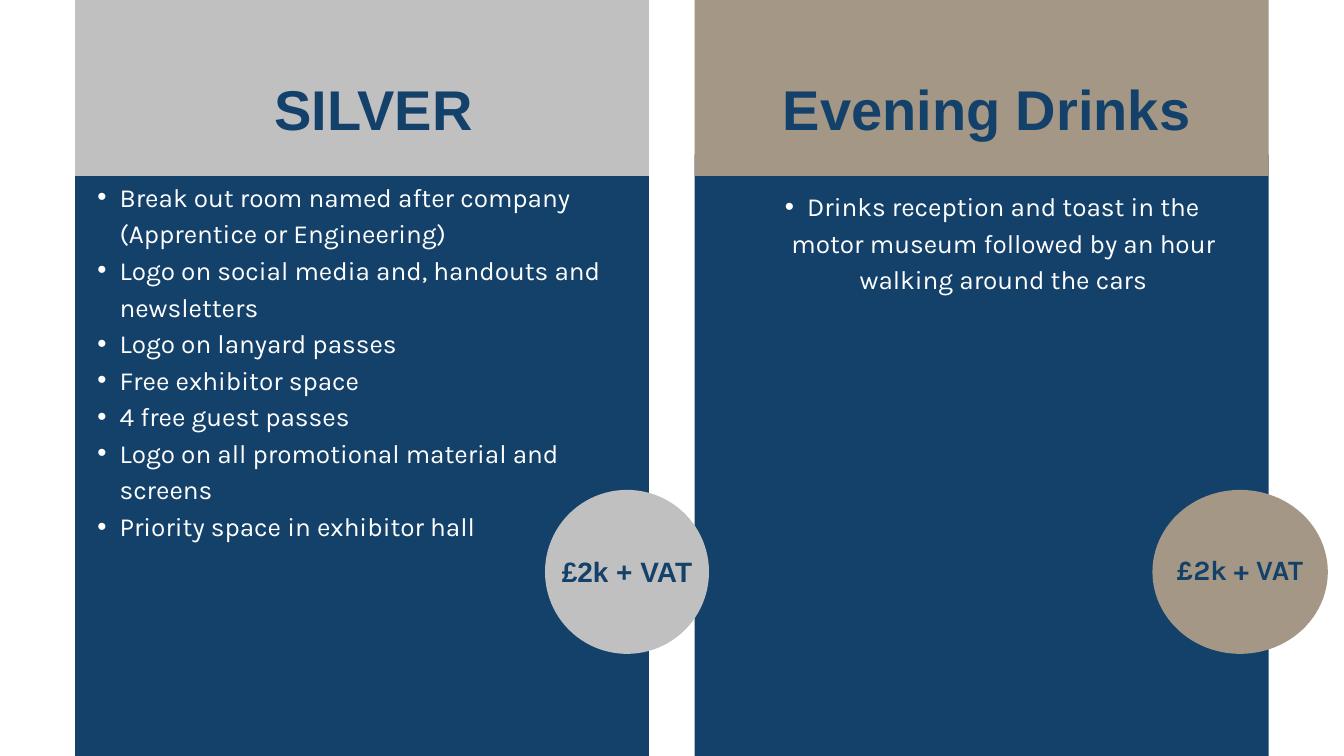
"""Build a slide comparing two sponsorship packages."""
import pptx
import pptx.util
import pptx.dml.color
import pptx.enum.shapes
import pptx.enum.text
import pptx.oxml
import pptx.oxml.ns

Cm, Pt = pptx.util.Cm, pptx.util.Pt
SHAPE = pptx.enum.shapes.MSO_SHAPE
ALIGN = pptx.enum.text.PP_ALIGN
ANCHOR = pptx.enum.text.MSO_ANCHOR

NAVY, WHITE, SILVER, BRONZE = "14416A", "FFFFFF", "C0C0C0", "A49785"
PANEL_TOP, PANEL_WIDTH, HEADER_BOTTOM = 5.84, 21.69, 6.65

PACKAGES = [
    {
        "title": "SILVER",
        "items": [
            "Break out room named after company (Apprentice or Engineering)",
            "Logo on social media and, handouts and newsletters",
            "Logo on lanyard passes",
            "Free exhibitor space",
            "4 free guest passes",
            "Logo on all promotional material and screens",
            "Priority space in exhibitor hall",
        ],
        "price": "£2k + VAT", "price_font": "Arial", "color": SILVER,
        "left": 2.84, "panel_height": 23.85, "header_top": -2.21,
        "title_at": (9.04, 3.18, 10.16, 2.34),
        "list_at": (2.84, 6.65, 20.83, 13.72), "list_align": ALIGN.LEFT,
        "badge_at": (20.6, 18.52, 6.2, 6.2), "price_at": (21.16, 20.73, 5.08, 1.5),
        "title_holder": 0, "list_holder": 2,
    },
    {
        "title": "Evening Drinks",
        "items": ["Drinks reception and toast in the motor museum followed by "
                  "an hour walking around the cars"],
        "price": "£2k + VAT", "price_font": "Karla", "color": BRONZE,
        "left": 26.26, "panel_height": 24.41, "header_top": -1.83,
        "title_at": (29.14, 3.18, 16.31, 2.34),
        "list_at": (27.86, 7.01, 18.44, 4.09), "list_align": ALIGN.CENTER,
        "badge_at": (43.56, 18.52, 6.63, 6.2), "price_at": (44.17, 18.72, 5.38, 5.41),
        "title_holder": 3, "list_holder": 4,
    },
]


def rgb(value):
    return pptx.dml.color.RGBColor.from_string(value)


def add_block(page, kind, at, color):
    block = page.shapes.add_shape(kind, *map(Cm, at))
    block.shadow.inherit = False
    block.fill.solid()
    block.fill.fore_color.rgb = rgb(color)
    block.line.fill.background()


def add_bullet(para):
    properties = para._p.get_or_add_pPr()
    properties.set("marL", str(Cm(1.68)))
    properties.set("indent", str(-Cm(0.84)))
    for tag, name, value in (("a:buFont", "typeface", "Arial"), ("a:buChar", "char", "•")):
        mark = pptx.oxml.parse_xml(f'<{tag} {pptx.oxml.ns.nsdecls("a")} {name}="{value}"/>')
        properties.append(mark)


def write(box, at, lines, size, spacing, font, color, align=ALIGN.CENTER,
          bold=False, bullets=False, anchor=ANCHOR.TOP):
    box.left, box.top, box.width, box.height = map(Cm, at)
    frame = box.text_frame
    frame.word_wrap = True
    frame.auto_size = pptx.enum.text.MSO_AUTO_SIZE.NONE
    frame.vertical_anchor = anchor
    frame.margin_left = frame.margin_right = frame.margin_top = frame.margin_bottom = 0
    frame.text = "\n".join(lines)
    for para in frame.paragraphs:
        para.alignment = align
        para.line_spacing = Pt(spacing)
        para.space_before = para.space_after = Pt(0)
        if bullets:
            para.level = 1
            add_bullet(para)
        para.font.name, para.font.size, para.font.bold = font, Pt(size), bold
        para.font.color.rgb = rgb(color)


def bring_to_front(box):
    box._element.getparent().append(box._element)


def main():
    deck = pptx.Presentation()
    deck.slide_width, deck.slide_height = Cm(50.8), Cm(28.58)
    page = deck.slides.add_slide(deck.slide_layouts[4])
    holders = {box.placeholder_format.idx: box for box in page.placeholders}

    for package in PACKAGES:
        left, top = package["left"], package["header_top"]
        add_block(page, SHAPE.RECTANGLE,
                  (left, PANEL_TOP, PANEL_WIDTH, package["panel_height"]), NAVY)
        add_block(page, SHAPE.RECTANGLE,
                  (left, top, PANEL_WIDTH, HEADER_BOTTOM - top), package["color"])
        title = holders.pop(package["title_holder"])
        write(title, package["title_at"], [package["title"]], 60, 61.2, "Arial", NAVY, bold=True)
        benefits = holders.pop(package["list_holder"])
        write(benefits, package["list_at"], package["items"], 28, 39.2, "Karla", WHITE,
              align=package["list_align"], bullets=True)
        bring_to_front(title)
        bring_to_front(benefits)

    for package in PACKAGES:
        add_block(page, SHAPE.OVAL, package["badge_at"], package["color"])
        price = page.shapes.add_textbox(*map(Cm, package["price_at"]))
        write(price, package["price_at"], [package["price"]], 30, 42, package["price_font"],
              NAVY, bold=True, anchor=ANCHOR.MIDDLE)

    for unused in holders.values():
        unused._element.getparent().remove(unused._element)
    deck.save("out.pptx")


if __name__ == "__main__":
    main()
